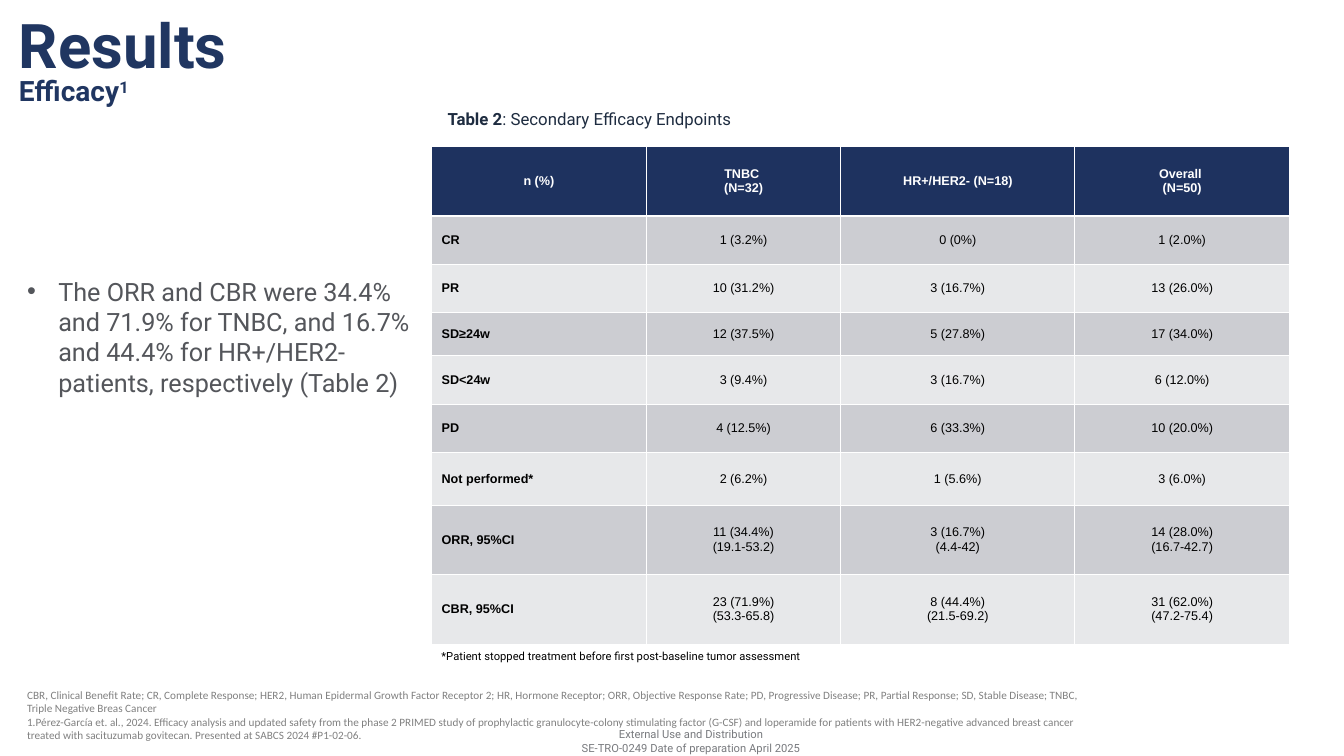
import pptx
import pptx.util
import pptx.dml.color
import pptx.enum.text
from lxml import etree
from pptx.oxml.ns import qn

Inches, Pt = pptx.util.Inches, pptx.util.Pt
ALIGN = pptx.enum.text.PP_ALIGN
ANCHOR = pptx.enum.text.MSO_ANCHOR
TONES = {"navy": "203661", "head": "1E325F", "ink": "1E2C40", "body": "54565B",
         "note": "808080", "foot": "787A7E", "dark": "CCCDD2", "light": "E7E8EA",
         "white": "FFFFFF", "black": "000000"}


def color(name):
    return pptx.dml.color.RGBColor.from_string(TONES[name])


def write(frame, lines, size, face, tone, bold=False, align=ALIGN.LEFT):
    frame.word_wrap = True
    for i, line in enumerate(lines):
        para = frame.paragraphs[0] if i == 0 else frame.add_paragraph()
        para.alignment = align
        para.add_run().text = line
        para.font.size, para.font.name, para.font.bold = Pt(size), face, bold
        para.font.color.rgb = color(tone)
    return frame


deck = pptx.Presentation()
deck.slide_width, deck.slide_height = Inches(13.33), Inches(7.5)
slide = deck.slides.add_slide(deck.slide_layouts[6])
frames = {}
for name, spot in {"foot": (5.14, 7.19, 3.43, 0.32), "refs": (0.17, 6.78, 10.72, 0.64),
                   "label": (4.34, 1.03, 3.12, 0.3), "point": (0.17, 2.69, 4.11, 1.62),
                   "title": (0.09, 0.29, 12, 0.82), "note": (4.28, 6.39, 5, 0.24)}.items():
    frames[name] = slide.shapes.add_textbox(*map(Inches, spot)).text_frame

# Title
title = write(frames["title"], ["Results", "Efficacy"], 44, "Roboto", "navy", True)
title.vertical_anchor = ANCHOR.BOTTOM
for para in title.paragraphs:
    para.line_spacing = 0.8
title.paragraphs[1].font.size = Pt(20)
mark = title.paragraphs[1].add_run()
mark.text = "1"
mark.font._element.set("baseline", "30000")

# Key point
point = frames["point"]
props = point.paragraphs[0]._p.get_or_add_pPr()
props.set("marL", str(Inches(0.31)))
props.set("indent", str(-Inches(0.31)))
etree.SubElement(props, qn("a:buFont")).set("typeface", "Arial")
etree.SubElement(props, qn("a:buChar")).set("char", "•")
write(point, ["The ORR and CBR were 34.4% and 71.9% for TNBC, and 16.7% and 44.4% for "
              "HR+/HER2- patients, respectively (Table 2)"], 18, "Roboto", "body")

# Table label
label = write(frames["label"], ["Table 2"], 12, "Roboto", "ink")
label.paragraphs[0].runs[0].font.bold = True
label.paragraphs[0].add_run().text = ": Secondary Efficacy Endpoints"

# Table of endpoints
rows = [
    ["n\u00a0(%)", "TNBC\u00a0\n(N=32)", "HR+/HER2- (N=18)", "Overall\u00a0\n(N=50)"],
    ["CR", "1 (3.2%)", "0 (0%)", "1 (2.0%)"],
    ["PR", "10 (31.2%)", "3 (16.7%)", "13 (26.0%)"],
    ["SD≥24w", "12 (37.5%)", "5 (27.8%)", "17 (34.0%)"],
    ["SD<24w", "3 (9.4%)", "3 (16.7%)", "6 (12.0%)"],
    ["PD", "4 (12.5%)", "6 (33.3%)", "10 (20.0%)"],
    ["Not\u00a0performed*", "2 (6.2%)", "1 (5.6%)", "3 (6.0%)"],
    ["ORR, 95%CI", "11 (34.4%)\n(19.1-53.2)", "3 (16.7%)\n(4.4-42)",
     "14 (28.0%)\n(16.7-42.7)"],
    ["CBR, 95%CI", "23 (71.9%)\n(53.3-65.8)", "8 (44.4%)\n(21.5-69.2)",
     "31 (62.0%)\n(47.2-75.4)"],
]
widths = [2.13, 1.93, 2.32, 2.13]
heights = [0.69, 0.48, 0.48, 0.43, 0.48, 0.48, 0.52, 0.69, 0.69]
table = slide.shapes.add_table(len(rows), len(widths), Inches(4.28), Inches(1.45),
                               Inches(8.51), Inches(4.92)).table
for col, width in zip(table.columns, widths):
    col.width = Inches(width)
for r, row in enumerate(rows):
    table.rows[r].height = Inches(heights[r])
    for c, text in enumerate(row):
        cell = table.cell(r, c)
        cell.vertical_anchor = ANCHOR.MIDDLE
        write(cell.text_frame, text.split("\n"), 9, "Arial", "black" if r else "white",
              r == 0 or c == 0, ALIGN.LEFT if r and c == 0 else ALIGN.CENTER)
        # Borders, thicker under the header
        for side in "LRTB":
            thick = (r, side) in [(0, "B"), (1, "T")]
            line = etree.SubElement(cell._tc.get_or_add_tcPr(), qn("a:ln" + side))
            line.set("w", str(Pt(1.85 if thick else 0.62)))
            fill = etree.SubElement(line, qn("a:solidFill"))
            etree.SubElement(fill, qn("a:srgbClr")).set("val", TONES["white"])
        cell.fill.solid()
        cell.fill.fore_color.rgb = color("head" if r == 0 else "dark" if r % 2 else "light")

# Notes below the table
write(frames["note"], ["*Patient stopped treatment before first post-baseline tumor assessment"],
      8, "Roboto", "black")
write(frames["refs"], [
    "CBR, Clinical Benefit Rate; CR, Complete Response; HER2, Human Epidermal Growth Factor "
    "Receptor 2; HR, Hormone Receptor; ORR, Objective Response Rate; PD, Progressive Disease; "
    "PR, Partial Response; SD, Stable Disease; TNBC, Triple Negative Breas Cancer",
    "1.Pérez-García et. al., 2024. Efficacy analysis and updated safety from the phase 2 PRIMED "
    "study of prophylactic granulocyte-colony stimulating factor (G-CSF) and loperamide for "
    "patients with HER2-negative advanced breast cancer treated with sacituzumab govitecan. "
    "Presented at SABCS 2024 #P1-02-06."], 8, "Calibri", "note")
foot = write(frames["foot"], ["External Use and Distribution",
                              "SE-TRO-0249 Date of preparation April 2025"],
             8, "Roboto", "foot", align=ALIGN.CENTER)
foot.vertical_anchor = ANCHOR.MIDDLE

deck.save("out.pptx")
